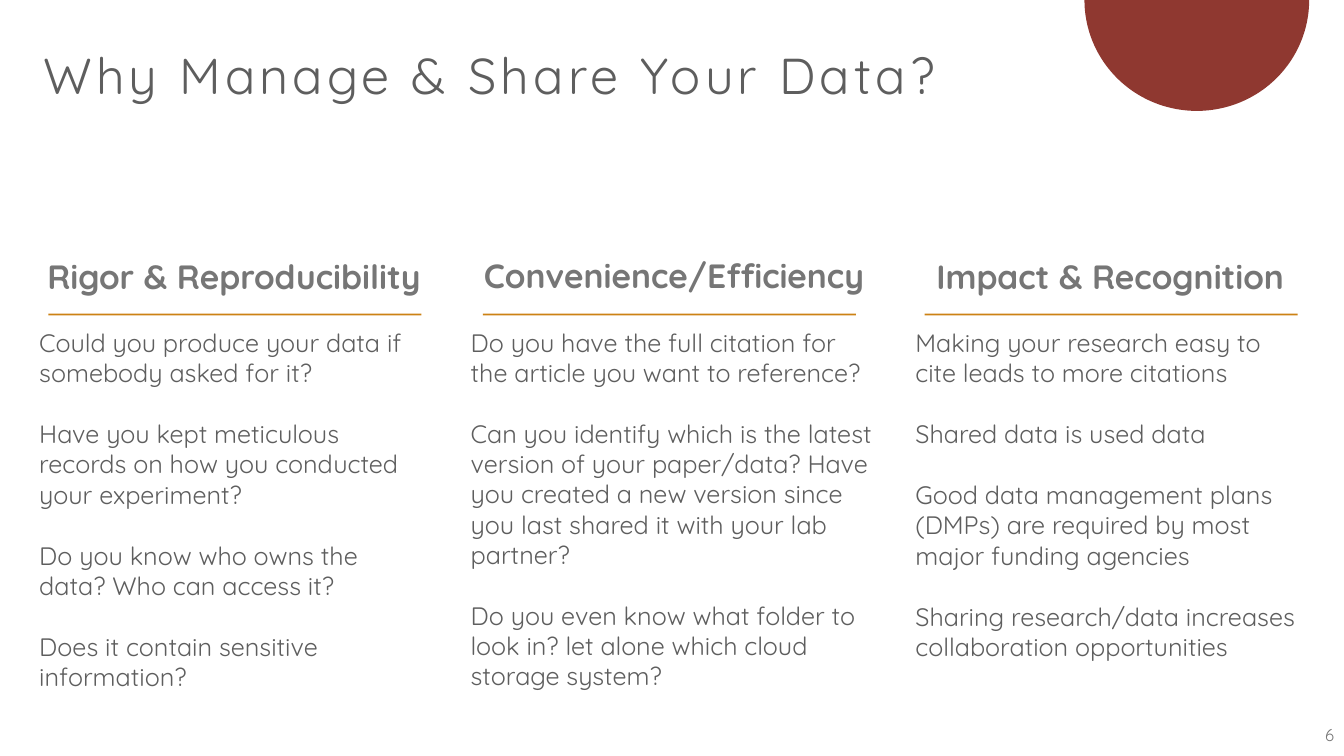
from math import cos, pi, sin

from pptx import Presentation
from pptx.dml.color import RGBColor as Rgb
from pptx.enum.shapes import MSO_SHAPE as Kind
from pptx.enum.text import MSO_ANCHOR as Anchor
from pptx.enum.text import MSO_AUTO_SIZE as Fit
from pptx.enum.text import PP_ALIGN as Align
from pptx.util import Inches, Pt

WIDE, HIGH = Inches(13.33), Inches(7.5)
HUES = {"red": "8F3830", "gold": "CC8214", "gray": "767676", "dark": "5E5E5E"}
FACE = "Quicksand"

TITLE = {"size": Pt(36)}
HEAD = {"size": Pt(24), "bold": True}
BODY = {"size": Pt(18), "bold": False}
PAGE = {"size": Pt(12)}
GAPS = {"space_before": Pt(10), "space_after": Pt(12)}
TOP = {"alignment": Align.CENTER, "line_spacing": 0.9, "space_after": Pt(12)}

COLUMNS = [
    (2.18, 30.46, 59.07, 3.6, "Rigor & Reproducibility", [
        "Could you produce your data if somebody asked for it?",
        "Have you kept meticulous records on how you conducted your experiment?",
        "Do you know who owns the data? Who can access it?",
        "Does it contain sensitive information?",
    ]),
    (34.28, 31.73, 62.93, 35.93, "Convenience/Efficiency", [
        "Do you have the full citation for the article you want to reference?",
        "Can you identify which is the latest version of your paper/data? "
        "Have you created a new version since you last shared it with your lab partner?",
        "Do you even know what folder to look in? let alone which cloud storage system?",
    ]),
    (67.37, 30.46, 59.07, 68.79, "Impact & Recognition", [
        "Making your research easy to cite leads to more citations",
        "Shared data is used data",
        "Good data management plans (DMPs) are required by most major funding agencies",
        "Sharing research/data increases collaboration opportunities",
    ]),
]


def place(x, y, w, h):
    return [round(n * side / 100) for n, side in zip((x, y, w, h), (WIDE, HIGH) * 2)]


def apply(item, look):
    for key, value in look.items():
        setattr(item, key, value)


def paint(shape, hue):
    shape.shadow.inherit = False
    shape.fill.solid()
    shape.fill.fore_color.rgb = Rgb.from_string(HUES[hue])
    shape.line.fill.background()


def add_box(slide, area, look):
    frame = slide.shapes.add_textbox(*place(*area)).text_frame
    apply(frame, {"auto_size": Fit.NONE, "word_wrap": True, **look})
    return frame


def write(para, text, hue, font, form):
    apply(para, form)
    run = para.add_run()
    run.text = text
    apply(run.font, {"name": FACE, **font})
    run.font.color.rgb = Rgb.from_string(HUES[hue])
    return run


def add_disc(slide):
    mid, wide, high, steps = 89.05, 8.36, 14.67, 90
    turns = [pi * n / steps for n in range(steps + 1)]
    dots = [tuple(place(mid + wide * cos(t), high * sin(t), 0, 0)[:2]) for t in turns]
    pen = slide.shapes.build_freeform(*dots[0])
    pen.add_line_segments(dots[1:], close=True)
    paint(pen.convert_to_shape(), "red")


def add_column(slide, left, wide, high, start, head, lines):
    frame = add_box(slide, (left, 33.73, wide, high), {})
    write(frame.paragraphs[0], head, "gray", HEAD, TOP)
    for line in lines:
        write(frame.add_paragraph(), line, "dark", BODY, GAPS)
    rule = slide.shapes.add_shape(Kind.RECTANGLE, *place(start, 41.47, 27.76, 0.27))
    paint(rule, "gold")


def add_title(slide):
    frame = add_box(slide, (2.48, 6.13, 77.57, 8.67), {})
    run = write(frame.paragraphs[0], "Why Manage & Share Your Data?",
                "dark", TITLE, {"line_spacing": 0.9})
    run._r.get_or_add_rPr().set("spc", "300")


def add_page(slide):
    frame = add_box(slide, (95.72, 94.53, 4.28, 5.33),
                    {"word_wrap": False, "vertical_anchor": Anchor.MIDDLE})
    write(frame.paragraphs[0], "6", "gray", PAGE, {"alignment": Align.RIGHT})


def main():
    deck = Presentation()
    apply(deck, {"slide_width": WIDE, "slide_height": HIGH})
    slide = deck.slides.add_slide(deck.slide_layouts[6])
    add_disc(slide)
    add_title(slide)
    for column in COLUMNS:
        add_column(slide, *column)
    add_page(slide)
    deck.save("out.pptx")


if __name__ == "__main__":
    main()
